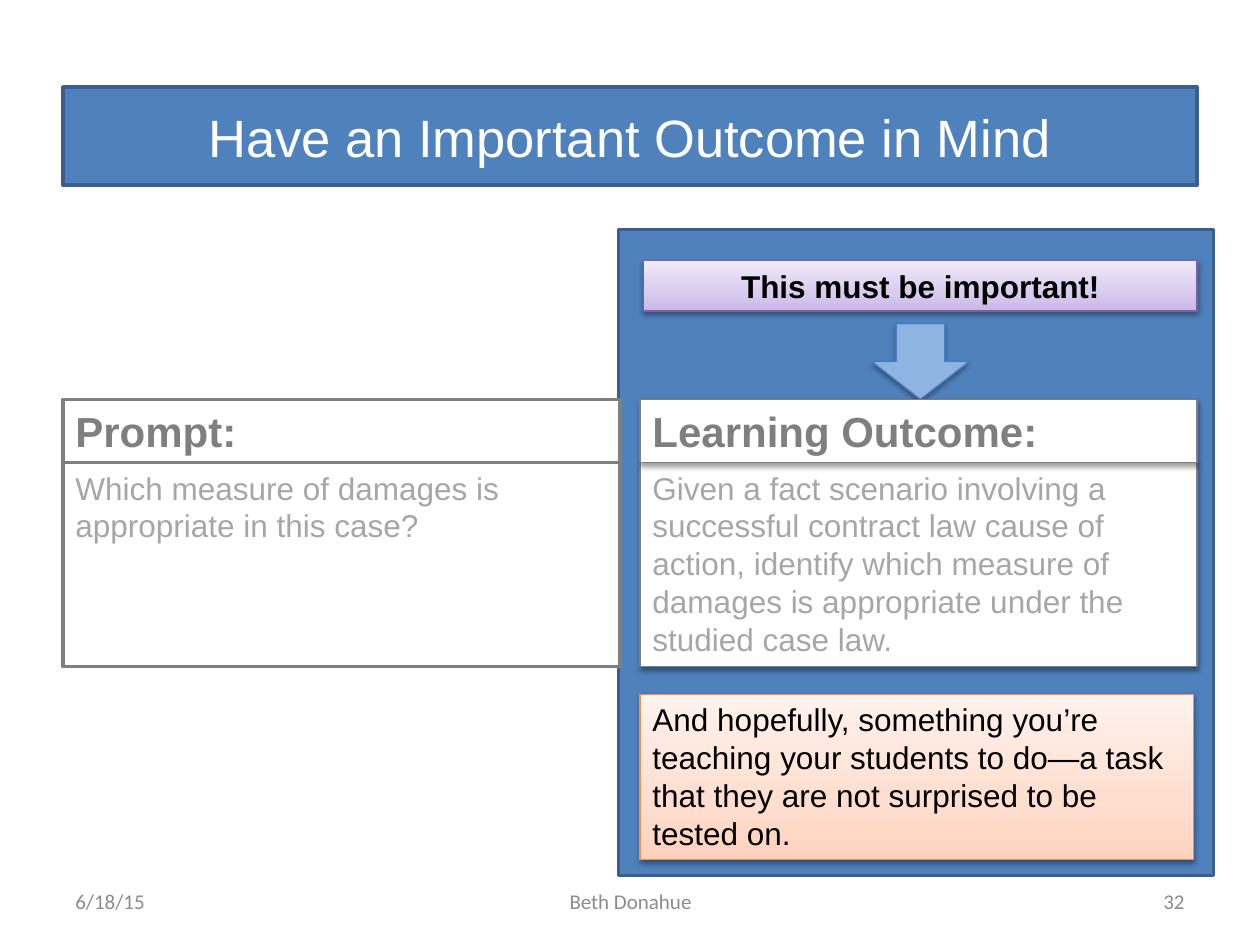
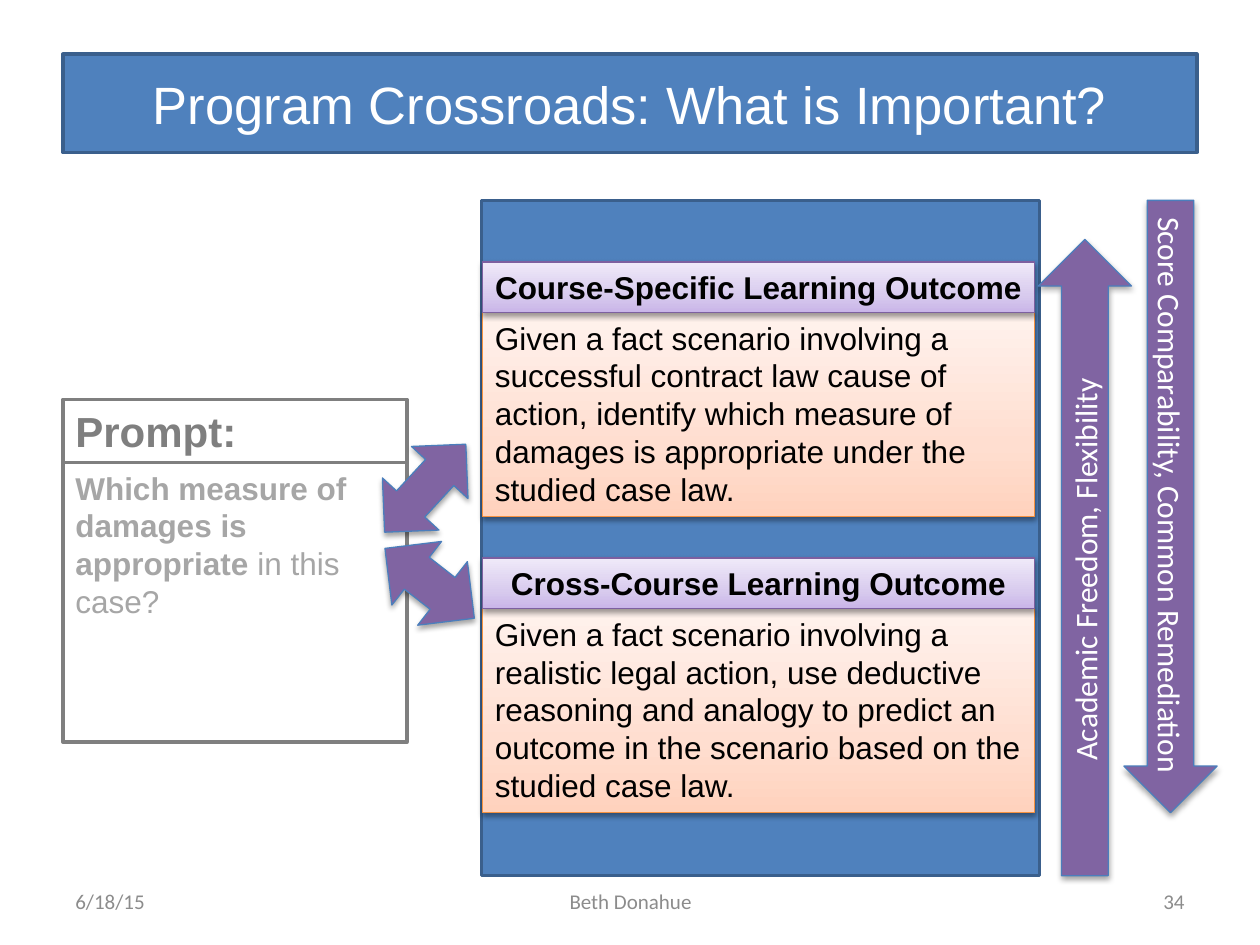
from lxml.etree import SubElement
from pptx import Presentation
from pptx.dml.color import RGBColor
from pptx.enum.shapes import MSO_SHAPE
from pptx.enum.text import MSO_ANCHOR, PP_ALIGN
from pptx.oxml.ns import qn
from pptx.util import Inches, Pt

WHITE = RGBColor(0xFF, 0xFF, 0xFF)
BLACK = RGBColor(0, 0, 0)
BLUE = RGBColor(0x4F, 0x81, 0xBD)
NAVY = RGBColor(0x3A, 0x5F, 0x8C)
EDGE = RGBColor(0x4B, 0x7E, 0xBC)
SKY = RGBColor(0x8E, 0xB4, 0xE3)
PLUM = RGBColor(0x80, 0x64, 0xA2)
VIOLET = RGBColor(0x7D, 0x60, 0xA0)
ORANGE = RGBColor(0xF6, 0x92, 0x40)
GRAY = RGBColor(0x7F, 0x7F, 0x7F)
PALE = RGBColor(0xA6, 0xA6, 0xA6)
FAINT = RGBColor(0x8C, 0x8C, 0x8C)

LILAC = ("C9B5E8", "D8CBEE", "F0EAF9")
PEACH = ("FFD2BD", "FFDED0", "FFF2ED")
STOPS = (0, 35, 100)

LEFT = 0.5
HEAD_TOP, HEAD_HIGH = 3.17, 0.5
BODY_TOP = HEAD_TOP + HEAD_HIGH
BAR_HIGH = 0.4
CASE = ("Given a fact scenario involving a successful contract law cause of "
        "action, identify which measure of damages is appropriate under the "
        "studied case law.")


def blend(shape, shades):
    """Fill the shape with three shades, the first at the bottom."""
    shape.fill.gradient()
    shape.fill.gradient_angle = 90
    stops = shape._element.spPr.find(".//" + qn("a:gsLst"))
    for stop in list(stops):
        stops.remove(stop)
    for place, shade in zip(STOPS, shades):
        stop = SubElement(stops, qn("a:gs"), pos=str(place * 1000))
        SubElement(stop, qn("a:srgbClr"), val=shade)


def shade(shape, alpha, drop):
    """Cast a soft black shadow straight down."""
    effects = shape._element.spPr.find(qn("a:effectLst"))
    shadow = SubElement(effects, qn("a:outerShdw"), blurRad=str(Pt(3.1)),
                        dist=str(Pt(drop)), dir="5400000", rotWithShape="0")
    black = SubElement(shadow, qn("a:srgbClr"), val="000000")
    SubElement(black, qn("a:alpha"), val=str(alpha * 1000))


def add_form(slide, kind, box, fill, edge, weight):
    shape = slide.shapes.add_shape(kind, *map(Inches, box))
    shape.shadow.inherit = False
    if isinstance(fill, tuple) and not isinstance(fill, RGBColor):
        blend(shape, fill)
    else:
        shape.fill.solid()
        shape.fill.fore_color.rgb = fill
    shape.line.color.rgb = edge
    shape.line.width = Pt(weight)
    return shape


def write(shape, text, size, color, bold=False, align=PP_ALIGN.LEFT,
          anchor=MSO_ANCHOR.TOP, font="Arial", strong=""):
    """Set the text of a shape, led by an optional bold part."""
    frame = shape.text_frame
    frame.word_wrap = True
    frame.vertical_anchor = anchor
    par = frame.paragraphs[0]
    par.alignment = align
    par.font.name = font
    par.font.size = Pt(size)
    par.font.color.rgb = color
    par.font.bold = bold
    if strong:
        lead = par.add_run()
        lead.text = strong
        lead.font.bold = True
    par.add_run().text = text


def add_panel(slide, box):
    add_form(slide, MSO_SHAPE.RECTANGLE, box, BLUE, NAVY, 2)


def add_title(slide, text, top):
    shape = add_form(slide, MSO_SHAPE.RECTANGLE, (LEFT, top, 9, 0.78),
                     BLUE, NAVY, 2)
    write(shape, text, 30, WHITE, align=PP_ALIGN.CENTER,
          anchor=MSO_ANCHOR.MIDDLE)


def add_card(slide, box, text, fill=WHITE, edge=GRAY, weight=0.75,
             size=18, color=BLACK, **style):
    """Add a text box; thin-edged ones cast a shadow."""
    shape = add_form(slide, MSO_SHAPE.RECTANGLE, box, fill, edge, weight)
    if weight < 1:
        shade(shape, 38, 1.6)
    write(shape, text, size, color, **style)


def add_prompt(slide, wide, high, text, strong=""):
    add_card(slide, (LEFT, HEAD_TOP, wide, HEAD_HIGH), "Prompt:",
             weight=2, size=24, color=GRAY, bold=True)
    add_card(slide, (LEFT, BODY_TOP, wide, high), text,
             weight=2, color=PALE, strong=strong)


def add_bar(slide, box, text):
    add_card(slide, box, text, LILAC, VIOLET, bold=True,
             align=PP_ALIGN.CENTER)


def add_note(slide, box, text):
    add_card(slide, box, text, PEACH, ORANGE)


def add_arrow(slide, kind, box, fill=PLUM, turn=0, text=""):
    shape = add_form(slide, kind, box, fill, EDGE, 0.75)
    shape.rotation = turn
    shade(shape, 35, 1.8)
    if text:
        write(shape, text, 18, WHITE, align=PP_ALIGN.CENTER,
              anchor=MSO_ANCHOR.MIDDLE, font="Calibri")
        shape.text_frame._txBody.bodyPr.set("vert", "vert270")


def add_foot(slide, number):
    for left, wide, text, align in (
            (3.42, 3.17, "Beth Donahue", PP_ALIGN.CENTER),
            (7.17, 2.33, str(number), PP_ALIGN.RIGHT),
            (LEFT, 2.33, "6/18/15", PP_ALIGN.LEFT)):
        box = slide.shapes.add_textbox(*map(Inches, (left, 6.95, wide, 0.4)))
        write(box, text, 12, FAINT, align=align, anchor=MSO_ANCHOR.MIDDLE,
              font="Calibri")


def draw_outcome(slide):
    left, wide = 5.08, 4.42
    add_panel(slide, (4.91, 1.82, 4.72, 5.13))
    add_title(slide, "Have an Important Outcome in Mind", 0.69)
    add_prompt(slide, wide, 1.62,
               "Which measure of damages is appropriate in this case?")
    add_card(slide, (left, BODY_TOP, wide, 1.62), CASE, color=PALE)
    add_bar(slide, (5.11, 2.07, 4.39, BAR_HIGH), "This must be important!")
    add_arrow(slide, MSO_SHAPE.DOWN_ARROW, (6.92, 2.57, 0.77, 0.6), SKY)
    add_note(slide, (left, 5.51, 4.39, 1.31),
             "And hopefully, something you’re teaching your students to do—a "
             "task that they are not surprised to be tested on.")
    add_card(slide, (left, HEAD_TOP, wide, HEAD_HIGH), "Learning Outcome:",
             size=24, color=GRAY, bold=True)
    add_foot(slide, 32)


def draw_crossroads(slide):
    add_panel(slide, (3.82, 1.59, 4.43, 5.36))
    add_title(slide, "Program Crossroads: What is Important?", 0.43)
    add_prompt(slide, 2.73, 2.22, "in this case?",
               "Which measure of damages is appropriate ")
    for top, head, text in (
            (2.08, "Course-Specific Learning Outcome", CASE),
            (4.43, "Cross-Course Learning Outcome",
             "Given a fact scenario involving a realistic legal action, use "
             "deductive reasoning and analogy to predict an outcome in the "
             "scenario based on the studied case law.")):
        add_note(slide, (3.83, top + BAR_HIGH, 4.38, 1.62), text)
        add_bar(slide, (3.83, top, 4.38, BAR_HIGH), head)
    for box, turn in (((2.9, 3.57, 0.95, 0.61), 312.7),
                      ((2.96, 4.31, 0.9, 0.64), 38)):
        add_arrow(slide, MSO_SHAPE.LEFT_RIGHT_ARROW, box, turn=turn)
    add_arrow(slide, MSO_SHAPE.UP_ARROW, (8.24, 1.9, 0.74, 5.05),
              text="Academic Freedom, Flexibility")
    add_arrow(slide, MSO_SHAPE.UP_ARROW, (8.92, 1.59, 0.74, 4.86), turn=180,
              text="Score Comparability, Common Remediation")
    add_foot(slide, 34)


def main():
    deck = Presentation()
    deck.slide_width, deck.slide_height = Inches(10), Inches(7.5)
    for draw in (draw_outcome, draw_crossroads):
        draw(deck.slides.add_slide(deck.slide_layouts[6]))
    deck.save("out.pptx")


if __name__ == "__main__":
    main()
